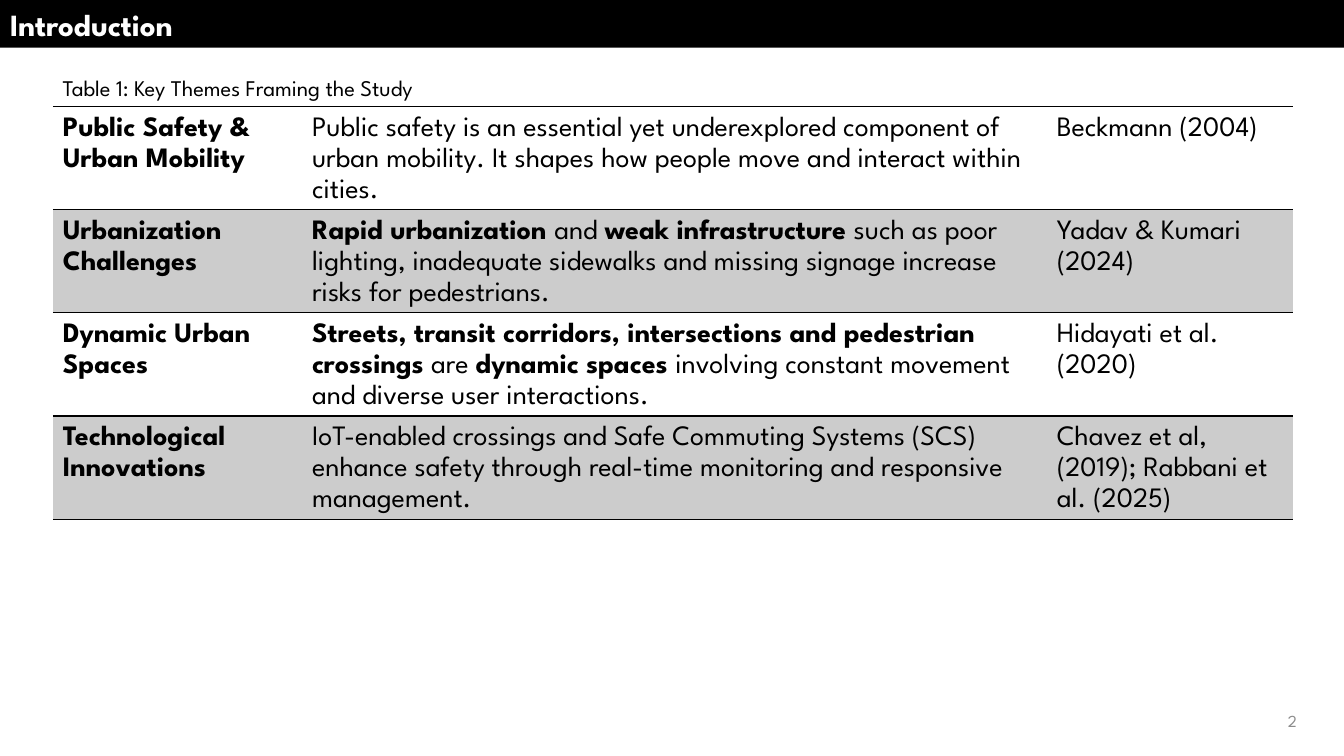
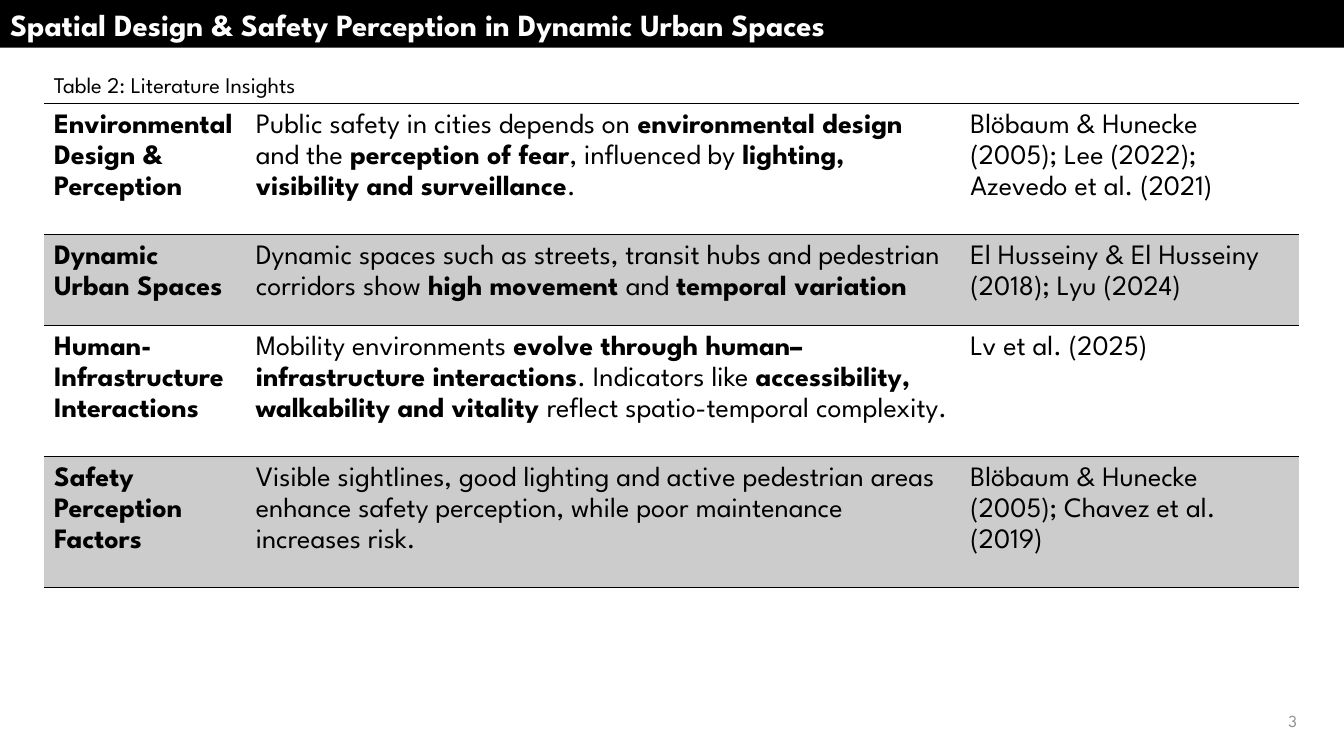
import pptx
import pptx.util
import pptx.dml.color
import pptx.enum.text
import pptx.oxml

Pt = pptx.util.Pt
Anchor = pptx.enum.text.MSO_ANCHOR
Align = pptx.enum.text.PP_ALIGN

# Shared look
WIDTH, HEIGHT = 960, 540
BLACK, WHITE, BAND, GREY = "000000", "FFFFFF", "CCCCCC", "8C8C8C"
FACE = "League Spartan"
TITLE = {"size": Pt(22), "bold": True}
BODY = {"size": Pt(20)}
LABEL = {"size": Pt(16)}
NUMBER = {"size": Pt(12)}

# Content: words between asterisks are bold
PAGES = [
    {
        "title": "Introduction", "number": "2",
        "label": "Table 1: Key Themes Framing the Study",
        "left": 37.7, "top": 76, "cols": [178, 532, 176], "rows": [73.6] * 4,
        "cells": [
            ("*Public Safety & Urban Mobility*",
             "Public safety is an essential yet underexplored component of urban "
             "mobility. It shapes how people move and interact within cities.",
             "Beckmann (2004)"),
            ("*Urbanization Challenges*",
             "*Rapid urbanization *and *weak infrastructure *such as poor lighting, "
             "inadequate sidewalks and missing signage increase risks for pedestrians.",
             "Yadav & Kumari (2024)"),
            ("*Dynamic Urban Spaces*",
             "*Streets, transit corridors, intersections and pedestrian crossings *are "
             "*dynamic spaces *involving constant movement and diverse user interactions.",
             "Hidayati et al. (2020)"),
            ("*Technological Innovations*",
             "IoT-enabled crossings and Safe Commuting Systems (SCS) enhance safety "
             "through real-time monitoring and responsive management.",
             "Chavez et al, (2019); Rabbani et al. (2025)"),
        ],
    },
    {
        "title": "Spatial Design & Safety Perception in Dynamic Urban Spaces",
        "number": "3",
        "label": "Table 2: Literature Insights",
        "left": 31.5, "top": 74, "cols": [144, 510.5, 242],
        "rows": [93.6, 65, 93.6, 93.6],
        "cells": [
            ("*Environmental Design & Perception*",
             "Public safety in cities depends on *environmental design* and the "
             "*perception of fear*, influenced by *lighting, visibility and surveillance*.",
             "Blöbaum & Hunecke (2005); Lee (2022); Azevedo et al. (2021)"),
            ("*Dynamic Urban Spaces*",
             "Dynamic spaces such as streets, transit hubs and pedestrian corridors "
             "show *high movement *and *temporal variation*",
             "El Husseiny & El Husseiny (2018); Lyu (2024)"),
            ("*Human-Infrastructure Interactions*",
             "Mobility environments *evolve through human–infrastructure interactions*. "
             "Indicators like *accessibility, walkability and vitality *reflect "
             "spatio-temporal complexity.",
             "Lv et al. (2025)"),
            ("*Safety Perception Factors*",
             "Visible sightlines, good lighting and active pedestrian areas enhance "
             "safety perception, while poor maintenance increases risk.",
             "Blöbaum & Hunecke (2005); Chavez et al. (2019)"),
        ],
    },
]


def color(code):
    return pptx.dml.color.RGBColor.from_string(code)


def apply(item, values):
    for name, value in values.items():
        setattr(item, name, value)


def write(frame, text, style, ink=BLACK, **para):
    """Fill a frame with one paragraph, bold between asterisks."""
    line = frame.paragraphs[0]
    apply(line, para)
    for i, part in enumerate(text.split("*")):
        if part:
            run = line.add_run()
            run.text = part
            apply(run.font, {"name": FACE, "bold": i % 2 == 1, **style})
            run.font.color.rgb = color(ink)


def setup(frame, anchor):
    apply(frame, {
        "word_wrap": True, "vertical_anchor": anchor,
        "auto_size": pptx.enum.text.MSO_AUTO_SIZE.NONE,
        "margin_left": Pt(7.2), "margin_right": Pt(7.2),
        "margin_top": Pt(3.6), "margin_bottom": Pt(3.6)})


def add_title(slide, text):
    band = slide.shapes.title
    apply(band, {"left": 0, "top": 0, "width": Pt(WIDTH), "height": Pt(34)})
    band.fill.solid()
    band.fill.fore_color.rgb = color(BLACK)
    setup(band.text_frame, Anchor.BOTTOM)
    write(band.text_frame, text, TITLE, WHITE, alignment=Align.LEFT)


def add_text(slide, box, text, style, ink, anchor, align):
    frame = slide.shapes.add_textbox(*map(Pt, box)).text_frame
    setup(frame, anchor)
    write(frame, text, style, ink, alignment=align)


def rule(cell):
    """Black lines above and below the cell, none at its sides."""
    props = cell._tc.get_or_add_tcPr()
    fill = f'<a:solidFill><a:srgbClr val="{BLACK}"/></a:solidFill>'
    sides = {"lnL": "<a:noFill/>", "lnR": "<a:noFill/>", "lnT": fill, "lnB": fill}
    for i, (side, paint) in enumerate(sides.items()):
        props.insert(i, pptx.oxml.parse_xml(
            f'<a:{side} xmlns:a="http://schemas.openxmlformats.org/drawingml/2006/main"'
            f' w="{Pt(1)}">{paint}</a:{side}>'))


def add_table(slide, page):
    cols, rows, cells = page["cols"], page["rows"], page["cells"]
    box = page["left"], page["top"], sum(cols), sum(rows)
    table = slide.shapes.add_table(len(rows), len(cols), *map(Pt, box)).table
    apply(table, {"first_row": False, "horz_banding": False})
    for col, width in zip(table.columns, cols):
        col.width = Pt(width)
    for r, (row, height) in enumerate(zip(table.rows, rows)):
        row.height = Pt(height)
        for cell, text in zip(row.cells, cells[r]):
            if r % 2:
                cell.fill.solid()
                cell.fill.fore_color.rgb = color(BAND)
            else:
                cell.fill.background()
            rule(cell)
            write(cell.text_frame, text, BODY, line_spacing=1.2)


def main():
    deck = pptx.Presentation()
    apply(deck, {"slide_width": Pt(WIDTH), "slide_height": Pt(HEIGHT)})
    for page in PAGES:
        slide = deck.slides.add_slide(deck.slide_layouts[5])
        add_title(slide, page["title"])
        add_text(slide, (page["left"], page["top"] - 27, 607, 26.6),
                 page["label"], LABEL, BLACK, Anchor.BOTTOM, Align.LEFT)
        add_table(slide, page)
        add_text(slide, (717.5, 500.5, 216, 28.8),
                 page["number"], NUMBER, GREY, Anchor.MIDDLE, Align.RIGHT)
    deck.save("out.pptx")


if __name__ == "__main__":
    main()
